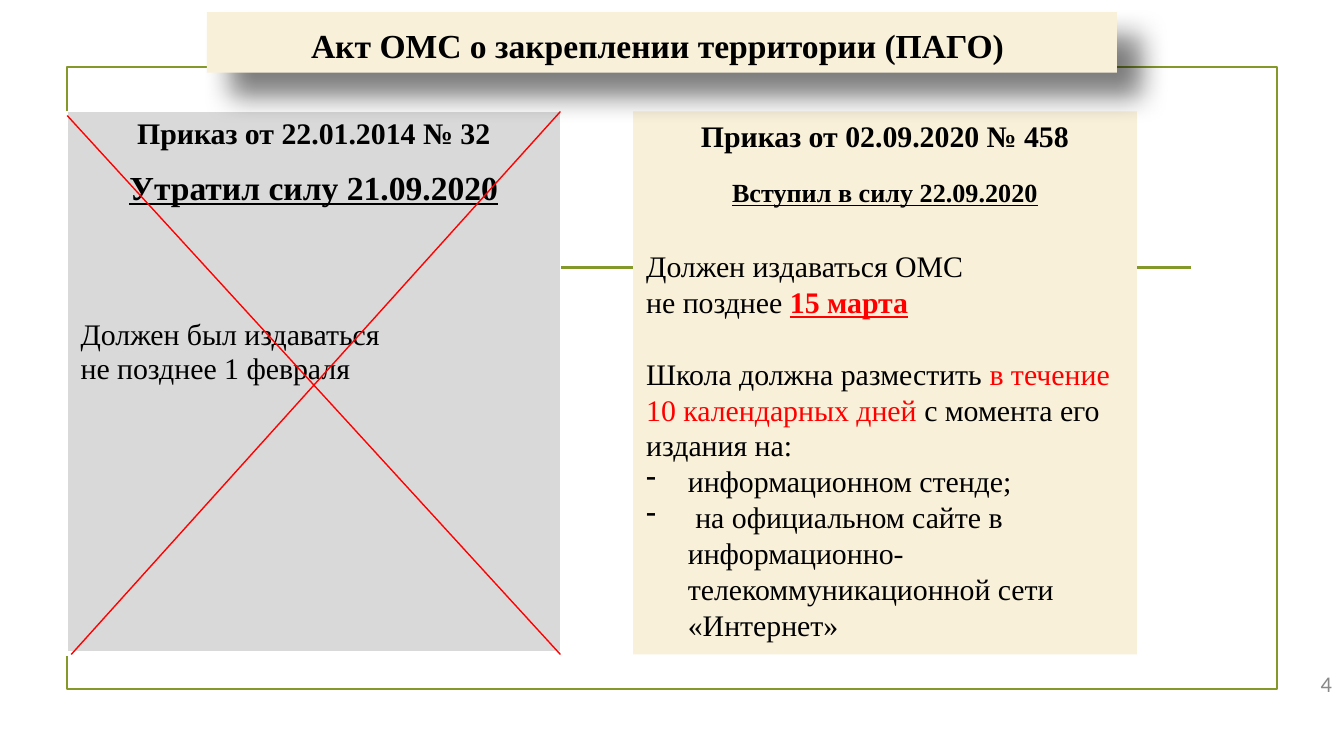
from lxml.etree import SubElement
from pptx import Presentation
from pptx.dml.color import RGBColor
from pptx.enum.shapes import MSO_CONNECTOR as CONN, MSO_SHAPE as SHAPE
from pptx.enum.text import MSO_ANCHOR as ANCHOR, MSO_AUTO_SIZE as FIT, PP_ALIGN as ALIGN
from pptx.oxml import parse_xml
from pptx.oxml.ns import nsdecls, qn
from pptx.util import Inches, Pt

C = {"green": "83992A", "cream": "F8F0D9", "gray": "D9D9D9", "red": "FF0000",
     "black": "000000", "white": "FFFFFF", "number": "898989"}
SERIF = "Times New Roman"


def rgb(name):
    return RGBColor.from_string(C[name])


def write(tf, paragraphs):
    """Each paragraph: kind, size, space before, runs of (text, style letters)."""
    for i, (kind, size, before, runs) in enumerate(paragraphs):
        p = tf.paragraphs[0] if i == 0 else tf.add_paragraph()
        p.alignment = ALIGN.CENTER if kind == "center" else ALIGN.LEFT
        if before:
            p.space_before = Pt(before)
        if kind == "bullet":
            pPr = p._p.get_or_add_pPr()
            pPr.set("marL", str(Inches(0.31)))
            pPr.set("indent", str(-Inches(0.31)))
            SubElement(pPr, qn("a:buFontTx"))
            SubElement(pPr, qn("a:buChar"), char="-")
        for text, style in runs:
            r = p.add_run()
            r.text = text
            r.font.name, r.font.size = SERIF, Pt(size)
            r.font.bold, r.font.underline = "b" in style, "u" in style
            r.font.color.rgb = rgb("red" if "r" in style else "black")


prs = Presentation()
prs.slide_width, prs.slide_height = Inches(10), Inches(10 * 9 / 16)
s = prs.slides.add_slide(prs.slide_layouts[5])

# Green frame
frame = s.shapes.add_shape(SHAPE.RECTANGLE, Inches(0.5), Inches(0.5), Inches(9), Inches(4.63))
frame.shadow.inherit = False
frame.fill.background()
frame.line.color.rgb = rgb("green")
frame.line.width = Pt(1.25)

# Slide number
number = s.shapes.add_textbox(Inches(7.68), Inches(4.94), Inches(2.33), Inches(0.3))
tf = number.text_frame
tf.word_wrap = True
tf.vertical_anchor = ANCHOR.MIDDLE
tf.text = "4"
p = tf.paragraphs[0]
p.alignment = ALIGN.RIGHT
p.runs[0].font.name, p.runs[0].font.size = "Calibri", Pt(12)
p.runs[0].font.color.rgb = rgb("number")

# Lines: green rule behind the panels, red cross over the old order
lines = [((1.15, 1.99), (8.86, 1.99), "green", 1.25),
         ((0.5, 0.86), (4.17, 4.87), "red", 0.75),
         ((4.17, 0.83), (0.53, 4.87), "red", 0.75)]
cross = []
for start, end, color, width in lines:
    line = s.shapes.add_connector(CONN.STRAIGHT, *map(Inches, start + end))
    line.line.color.rgb = rgb(color)
    line.line.width = Pt(width)
    SubElement(line._element.spPr, qn("a:effectLst"))
    if color == "red":
        cross.append(line)

# Old order: one-cell table
table = s.shapes.add_table(1, 1, Inches(0.5), Inches(0.83), Inches(3.67), Inches(4.03)).table
cell = table.cell(0, 0)
cell.fill.solid()
cell.fill.fore_color.rgb = rgb("gray")
tcPr = cell._tc.get_or_add_tcPr()
for i, (side, width) in enumerate([("L", 1), ("R", 1), ("T", 1), ("B", 3)]):
    tcPr.insert(i, parse_xml(
        f'<a:ln{side} {nsdecls("a")} w="{Pt(width)}"><a:solidFill>'
        f'<a:srgbClr val="{C["white"]}"/></a:solidFill></a:ln{side}>'))
write(cell.text_frame, [
    ("center", 16, 0, [("Приказ от 22.01.2014 № 32", "b")]),
    ("center", 18, 10, [("Утратил силу 21.09.2020", "bu")]),
    ("left", 16, 60, [("Должен был издаваться", "")]),
    ("left", 16, 0, [("не позднее 1 февраля", "")]),
])

# New order
panel = s.shapes.add_shape(SHAPE.RECTANGLE, Inches(4.71), Inches(0.83), Inches(3.75), Inches(4.04))
panel.shadow.inherit = False
panel.fill.solid()
panel.fill.fore_color.rgb = rgb("cream")
panel.line.fill.background()
panel.text_frame.word_wrap = True
panel.text_frame.vertical_anchor = ANCHOR.TOP
write(panel.text_frame, [
    ("center", 16, 0, [("Приказ от 02.09.2020 № 458", "b")]),
    ("center", 14, 12, [("Вступил в силу 22.09.2020", "bu")]),
    ("left", 16, 21.6, [("Должен издаваться ОМС", "")]),
    ("left", 16, 0, [("не позднее ", ""), ("15 марта", "bur")]),
    ("left", 16, 19.2, [("Школа должна разместить ", ""),
                        ("в течение 10 календарных дней ", "r"),
                        ("с момента его издания на:", "")]),
    ("bullet", 16, 0, [("информационном стенде;", "")]),
    ("bullet", 16, 0, [(" на официальном сайте в информационно-телекоммуникационной "
                        "сети «Интернет»", "")]),
])

# Title banner with a soft shadow
title = s.shapes.title
title.left, title.top = Inches(1.54), Inches(0.09)
title.width, title.height = Inches(6.77), Inches(0.45)
title.fill.solid()
title.fill.fore_color.rgb = rgb("cream")
title.line.fill.background()
title._element.spPr.append(parse_xml(
    f'<a:effectLst {nsdecls("a")}><a:outerShdw blurRad="{Pt(15)}" dist="{Pt(18)}" '
    f'dir="2700000" algn="tl" rotWithShape="0"><a:srgbClr val="{C["black"]}">'
    '<a:alpha val="51000"/></a:srgbClr></a:outerShdw></a:effectLst>'))
tf = title.text_frame
tf.auto_size = FIT.NONE
tf.word_wrap = True
tf.vertical_anchor = ANCHOR.MIDDLE
tf.margin_top, tf.margin_bottom = Inches(0.09), Inches(0.05)
write(tf, [("center", 18, 0, [("Акт ОМС о закреплении территории (ПАГО) ", "b")])])

# Bring the cross and the banner to the front
for shape in cross + [title]:
    s.shapes._spTree.append(shape._element)

prs.save("out.pptx")
